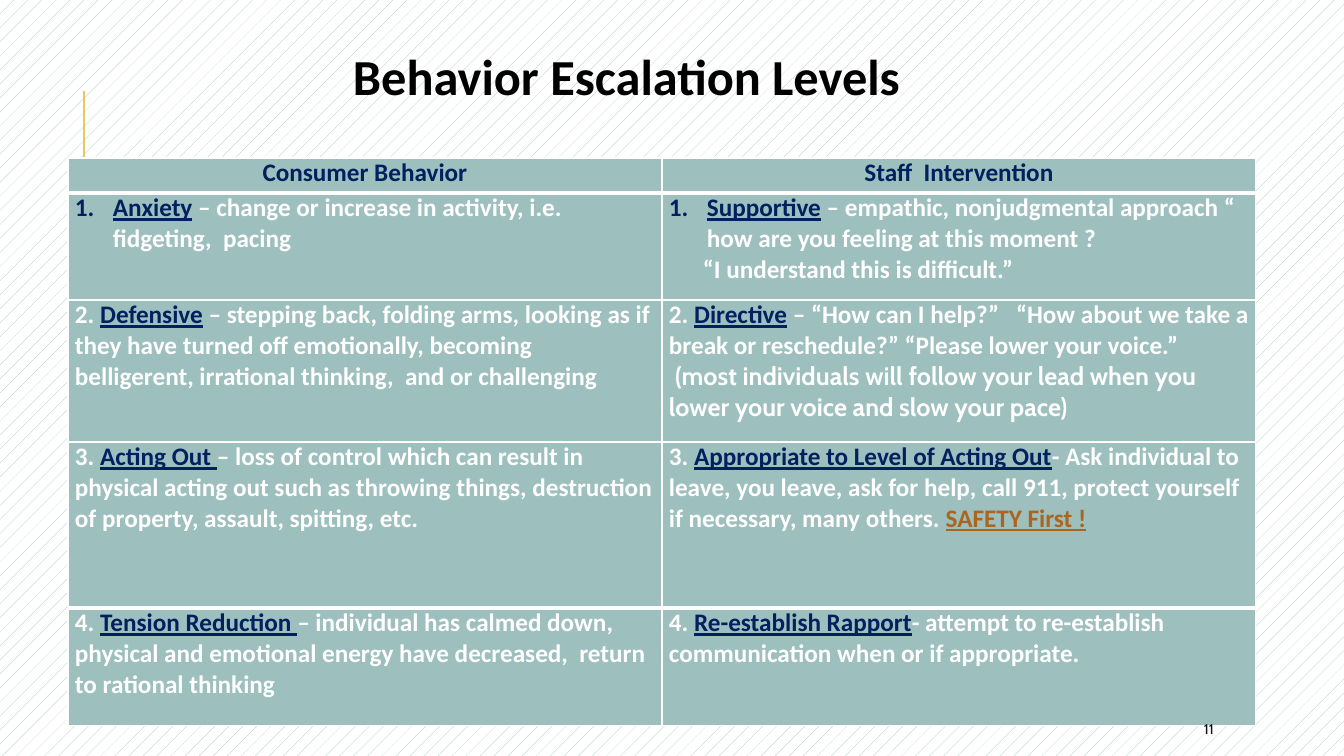
from lxml import etree
from pptx import Presentation
from pptx.dml.color import RGBColor
from pptx.enum.dml import MSO_PATTERN
from pptx.enum.shapes import MSO_CONNECTOR
from pptx.enum.text import MSO_ANCHOR, PP_ALIGN
from pptx.oxml.ns import qn
from pptx.util import Pt

DOTTED = MSO_PATTERN.PERCENT_5
STRAIGHT = MSO_CONNECTOR.STRAIGHT
TOP, MIDDLE = MSO_ANCHOR.TOP, MSO_ANCHOR.MIDDLE
LEFT, CENTER = PP_ALIGN.LEFT, PP_ALIGN.CENTER

NAVY = RGBColor(0x00, 0x20, 0x60)
TEAL = RGBColor(0x9D, 0xBF, 0xBE)
WHITE = RGBColor(0xFF, 0xFF, 0xFF)
BLACK = RGBColor(0x00, 0x00, 0x00)
INK = RGBColor(0x0D, 0x0D, 0x0D)
GOLD = RGBColor(0xE3, 0xCC, 0x5A)
RUST = RGBColor(0xAB, 0x65, 0x1E)

# Content: each cell is a list of (layout, runs); each run is (text, style)
TITLE = "Behavior Escalation Levels"
PAGE_NUMBER = "11"
LEVELS = [
    ([("heading", [("Consumer Behavior", "navy")])],
     [("heading", [("Staff  Intervention", "navy")])]),
    ([("numbered", [("Anxiety", "term"),
                    (" – change or increase in activity, i.e. fidgeting,  pacing", "body")])],
     [("numbered", [("Supportive", "term"),
                    (" – empathic, nonjudgmental approach “ how are you feeling at this moment ?", "body")]),
      ("quote", [("“I understand this is difficult.”", "body")])]),
    ([("plain", [("2. ", "body"), ("Defensive", "term"),
                 (" – stepping back, folding arms, looking as if they have turned off emotionally, "
                  "becoming belligerent, irrational thinking,  and or challenging", "body")])],
     [("plain", [("2. ", "body"), ("Directive", "term"),
                 (" – “How can I help?”   “How about we take a break or reschedule?” "
                  "“Please lower your voice.”", "body")]),
      ("plain", [(" ", "spacer"),
                 ("(most individuals will follow your lead when you lower your voice "
                  "and slow your pace)", "aside")])]),
    ([("plain", [("3. ", "body"), ("Acting Out ", "term"),
                 ("– loss of control which can result in physical acting out such as throwing things, "
                  "destruction of property, assault, spitting, etc.", "body")])],
     [("plain", [("3. ", "body"), ("Appropriate to Level of Acting Out", "term"),
                 ("- Ask individual to leave, you leave, ask for help, call 911, protect yourself "
                  "if necessary, many others. ", "body"),
                 ("SAFETY First !", "warning")])]),
    ([("plain", [("4. ", "body"), ("Tension Reduction ", "term"),
                 ("– individual has calmed down, physical and emotional energy have decreased,  "
                  "return to rational thinking", "body")])],
     [("plain", [("4. ", "body"), ("Re-establish Rapport", "term"),
                 ("- attempt to re-establish communication when or if appropriate.", "body")])]),
]

# Formats: font name, size, colour, bold, underline
STYLES = {
    "title": ("Calibri", 36, BLACK, True, False),
    "page": ("Cabin", 10, INK, False, False),
    "navy": ("Calibri", 18, NAVY, True, False),
    "term": ("Calibri", 18, NAVY, True, True),
    "body": ("Calibri", 18, WHITE, True, False),
    "spacer": ("Times New Roman", 18, WHITE, True, False),
    "aside": ("Cabin", 18, WHITE, True, False),
    "warning": ("Calibri", 18, RUST, True, True),
}
# Paragraph layouts: alignment, left margin, first-line indent, automatic number
LAYOUTS = {
    "plain": (LEFT, 0, 0, False),
    "heading": (CENTER, 0, 0, False),
    "numbered": (LEFT, 38, -38, True),
    "quote": (LEFT, 34, 0, False),
}

# Geometry in px
SLIDE_W, SLIDE_H = 1344, 756
TABLE_LEFT, TABLE_TOP, COLUMN_W = 68, 158, 594
ROW_HEIGHTS = [35, 107, 142, 166, 118]
CELL_INSET = 7
THIN, THICK = 1, 3


def px(length):
    return round(length * 914400 / 100.8)


def add_run(paragraph, text, style):
    run = paragraph.add_run()
    run.text = text
    name, size, color, bold, underline = STYLES[style]
    font_format = {"name": name, "size": Pt(size), "bold": bold, "underline": underline}
    for attribute, value in font_format.items():
        setattr(run.font, attribute, value)
    run.font.color.rgb = color


def fill_paragraph(paragraph, layout, runs):
    alignment, margin, indent, numbered = LAYOUTS[layout]
    paragraph.alignment = alignment
    properties = paragraph._p.get_or_add_pPr()
    properties.set("marL", str(px(margin)))
    properties.set("indent", str(px(indent)))
    if numbered:
        etree.SubElement(properties, qn("a:buAutoNum"), type="arabicPeriod")
    for text, style in runs:
        add_run(paragraph, text, style)


def add_border(cell, side, width):
    line = etree.SubElement(cell._tc.get_or_add_tcPr(), qn("a:ln" + side), w=str(Pt(width)))
    fill = etree.SubElement(line, qn("a:solidFill"))
    etree.SubElement(fill, qn("a:srgbClr"), val=str(WHITE))


def add_label(box, text, style, anchor, left_inset):
    label = slide.shapes.add_textbox(*map(px, box))
    frame = label.text_frame
    frame.word_wrap = True
    frame.vertical_anchor = anchor
    frame.margin_left = px(left_inset)
    add_run(frame.paragraphs[0], text, style)


deck = Presentation()
deck.slide_width, deck.slide_height = px(SLIDE_W), px(SLIDE_H)
slide = deck.slides.add_slide(deck.slide_layouts[6])

# Background pattern
backdrop = slide.background.fill
backdrop.patterned()
backdrop.pattern = DOTTED
backdrop.fore_color.rgb = TEAL
backdrop.back_color.rgb = WHITE

# Gold accent line, partly behind the table
accent = slide.shapes.add_connector(STRAIGHT, px(84), px(192), px(84), px(91))
accent.line.color.rgb = GOLD
accent.line.width = Pt(1.5)
etree.SubElement(accent._element.spPr, qn("a:effectLst"))

# Table of levels
levels = slide.shapes.add_table(
    len(LEVELS), 2, px(TABLE_LEFT), px(TABLE_TOP), px(2 * COLUMN_W), px(sum(ROW_HEIGHTS))).table
levels.first_row = levels.horz_banding = False
for column in levels.columns:
    column.width = px(COLUMN_W)
last = len(LEVELS) - 1
cell_format = {"margin_left": px(CELL_INSET), "margin_right": px(CELL_INSET),
               "margin_top": 0, "margin_bottom": 0, "vertical_anchor": TOP}
for r, (height, row) in enumerate(zip(ROW_HEIGHTS, LEVELS)):
    levels.rows[r].height = px(height)
    top = THICK if r in (1, last) else THIN
    bottom = THICK if r in (0, last - 1) else THIN
    for c, paragraphs in enumerate(row):
        cell = levels.cell(r, c)
        for attribute, value in cell_format.items():
            setattr(cell, attribute, value)
        for side, width in zip("LRTB", (THIN, THIN, top, bottom)):
            add_border(cell, side, width)
        cell.fill.solid()
        cell.fill.fore_color.rgb = TEAL
        frame = cell.text_frame
        for i, (layout, runs) in enumerate(paragraphs):
            fill_paragraph(frame.add_paragraph() if i else frame.paragraphs[0], layout, runs)

# Page number and title
add_label((1194, 714, 107, 30), PAGE_NUMBER, "page", MIDDLE, 10)
add_label((286, 40, 751, 72), TITLE, "title", TOP, 67)

deck.save("out.pptx")
